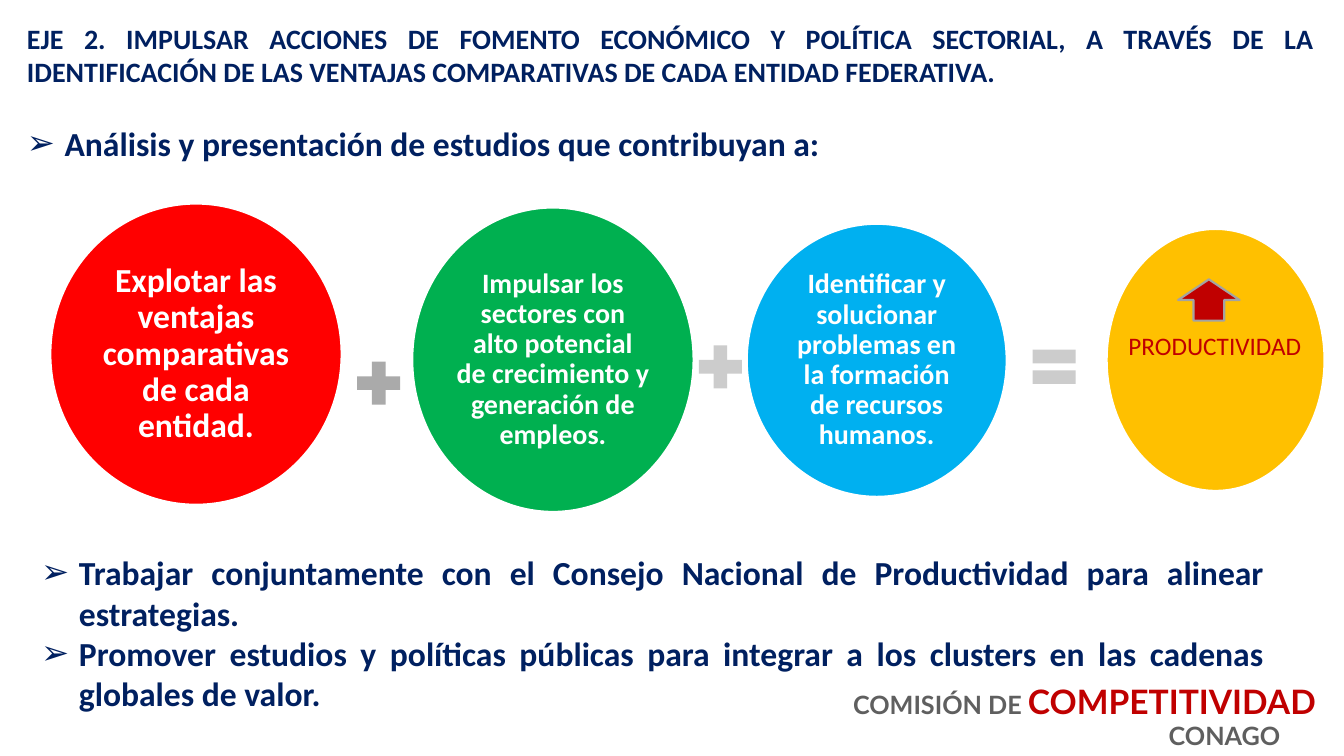
from lxml.etree import SubElement
from pptx import Presentation
from pptx.dml.color import RGBColor
from pptx.enum.shapes import MSO_SHAPE
from pptx.enum.text import MSO_ANCHOR, PP_ALIGN
from pptx.oxml.ns import qn
from pptx.util import Cm, Pt

NAVY, RED, GRAY, WHITE = "002060", "C00000", "5F5F5F", "FFFFFF"


def color(hex_code):
    return RGBColor.from_string(hex_code)


def write(paragraph, text, size=24, font="Calibri", fill=NAVY, bold=True):
    """Append a formatted run to the paragraph."""
    run = paragraph.add_run()
    run.text = text
    run.font.size = Pt(size)
    run.font.name = font
    run.font.bold = bold
    run.font.color.rgb = color(fill)


def set_bullet(paragraph):
    properties = paragraph._p.get_or_add_pPr()
    properties.set("marL", str(Cm(0.95)))
    properties.set("indent", str(-Cm(0.95)))
    SubElement(properties, qn("a:buFont"), typeface="Arial")
    SubElement(properties, qn("a:buChar"), char="➢")


class SlideBuilder:
    def __init__(self, slide):
        self.slide = slide

    def shape(self, kind, left, top, width, height, fill, line=None):
        shape = self.slide.shapes.add_shape(
            kind, Cm(left), Cm(top), Cm(width), Cm(height))
        shape.shadow.inherit = False
        shape.fill.solid()
        shape.fill.fore_color.rgb = color(fill)
        if line:
            shape.line.color.rgb = color(line)
            shape.line.width = Pt(1.5)
        else:
            shape.line.fill.background()
        return shape

    def circle(self, left, top, width, height, fill, text="", size=20):
        circle = self.shape(MSO_SHAPE.OVAL, left, top, width, height, fill, WHITE)
        if not text:
            return
        frame = circle.text_frame
        frame.word_wrap = True
        frame.vertical_anchor = MSO_ANCHOR.MIDDLE
        frame.margin_left = frame.margin_right = Cm(0.08)
        frame.margin_top = frame.margin_bottom = Cm(0.08)
        paragraph = frame.paragraphs[0]
        paragraph.alignment = PP_ALIGN.CENTER
        paragraph.line_spacing = 0.9
        write(paragraph, text, size=size, fill=WHITE)

    def text_box(self, left, top, width, height, aligns, anchor=MSO_ANCHOR.TOP):
        """Add a box with one paragraph per alignment; return the paragraphs."""
        frame = self.slide.shapes.add_textbox(
            Cm(left), Cm(top), Cm(width), Cm(height)).text_frame
        frame.word_wrap = True
        frame.vertical_anchor = anchor
        for _ in aligns[1:]:
            frame.add_paragraph()
        for paragraph, align in zip(frame.paragraphs, aligns):
            paragraph.alignment = align
        return frame.paragraphs


def main():
    presentation = Presentation()
    presentation.slide_width, presentation.slide_height = Cm(33.87), Cm(19.05)
    builder = SlideBuilder(
        presentation.slides.add_slide(presentation.slide_layouts[6]))

    heading, analysis = builder.text_box(
        0.43, 0.41, 32.94, 4.7, [PP_ALIGN.JUSTIFY] * 2)
    write(heading, "EJE 2. IMPULSAR ACCIONES DE FOMENTO ECONÓMICO Y POLÍTICA "
          "SECTORIAL, A TRAVÉS DE LA IDENTIFICACIÓN DE LAS VENTAJAS "
          "COMPARATIVAS DE CADA ENTIDAD FEDERATIVA.", size=20)
    analysis.space_before = Pt(24.4)
    set_bullet(analysis)
    write(analysis, "Análisis y presentación de estudios que contribuyan a:")

    commission, conago = builder.text_box(
        20.8, 16.71, 13.06, 2.34, [PP_ALIGN.CENTER] * 2, MSO_ANCHOR.BOTTOM)
    write(commission, "COMISIÓN DE ", size=18, font="Lato", fill=GRAY)
    write(commission, "COMPETITIVIDAD", font="Lato", fill=RED)
    conago._p.get_or_add_pPr().set("marL", str(Cm(7.06)))
    write(conago, "CONAGO", size=18, font="Lato", fill=GRAY)

    builder.circle(1.27, 5.13, 7.34, 7.59, "FF0000",
                   "Explotar las ventajas comparativas de cada entidad.", size=24)
    builder.circle(10.39, 5.23, 7.09, 7.67, "00B050",
                   "Impulsar los sectores con alto potencial de crecimiento y "
                   "generación de empleos.")
    builder.circle(18.82, 5.64, 6.55, 6.88, "00B0F0",
                   "Identificar y solucionar problemas en la formación de "
                   "recursos humanos.")
    builder.circle(27.89, 5.77, 5.49, 6.6, "FFC000")

    for operator, left, top, fill in (
            (MSO_SHAPE.MATH_PLUS, 8.81, 8.92, "AAAAAA"),
            (MSO_SHAPE.MATH_PLUS, 17.42, 8.51, "CCCCCC"),
            (MSO_SHAPE.MATH_EQUAL, 25.83, 8.51, "CCCCCC")):
        builder.shape(operator, left, top, 1.47, 1.47, fill)

    productivity, = builder.text_box(28.19, 8.2, 5.18, 1.02, [PP_ALIGN.LEFT])
    write(productivity, "PRODUCTIVIDAD", size=18, fill=RED, bold=False)
    builder.shape(MSO_SHAPE.UP_ARROW, 29.69, 7.04, 1.55, 1.04, RED, "A3A3A3")

    actions = (
        "Trabajar conjuntamente con el Consejo Nacional de Productividad para "
        "alinear estrategias.",
        "Promover estudios y políticas públicas para integrar a los clusters en "
        "las cadenas globales de valor.")
    paragraphs = builder.text_box(
        0.79, 13.79, 31.32, 4.37, [PP_ALIGN.JUSTIFY] * len(actions))
    for paragraph, action in zip(paragraphs, actions):
        set_bullet(paragraph)
        write(paragraph, action)

    presentation.save("out.pptx")


if __name__ == "__main__":
    main()
